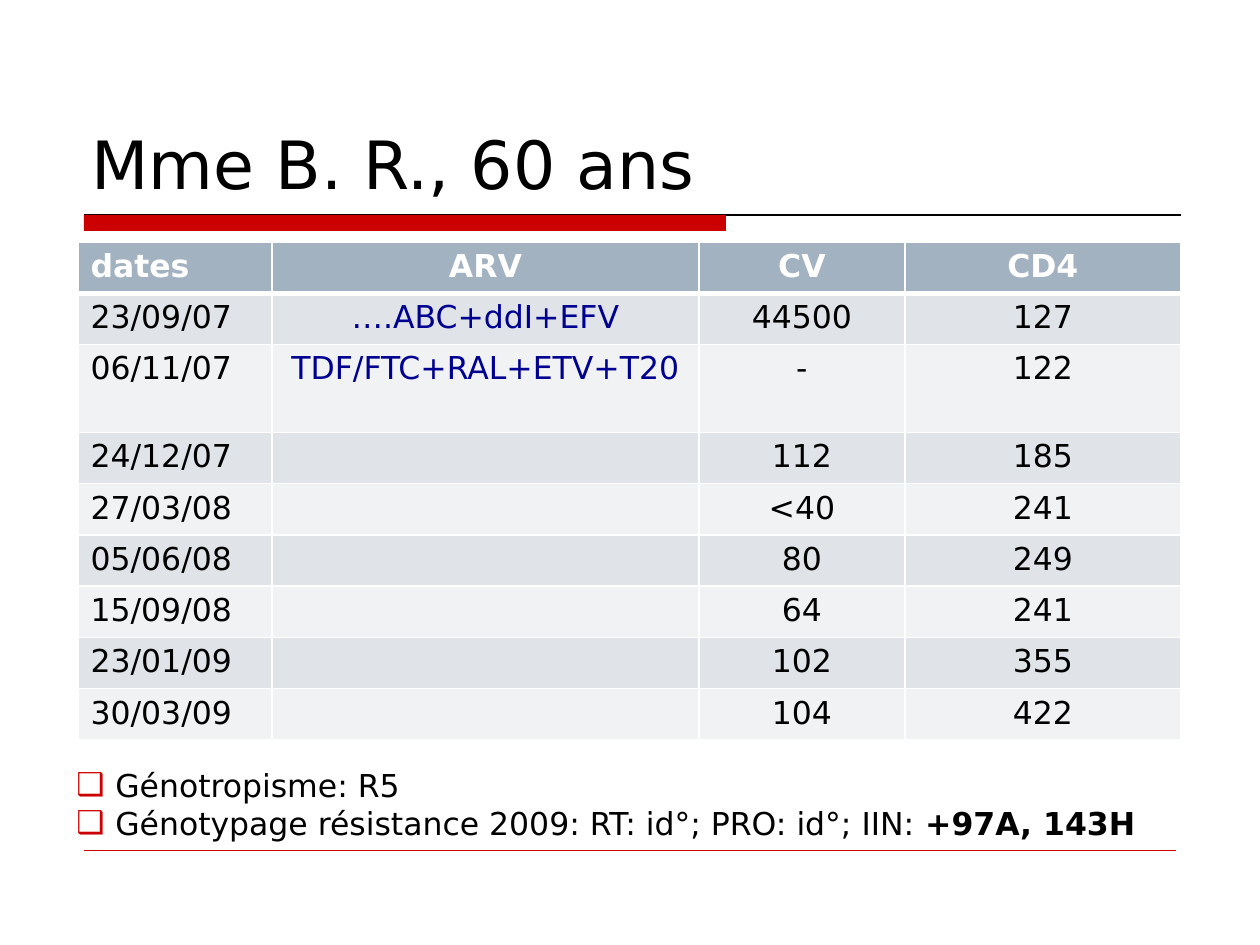
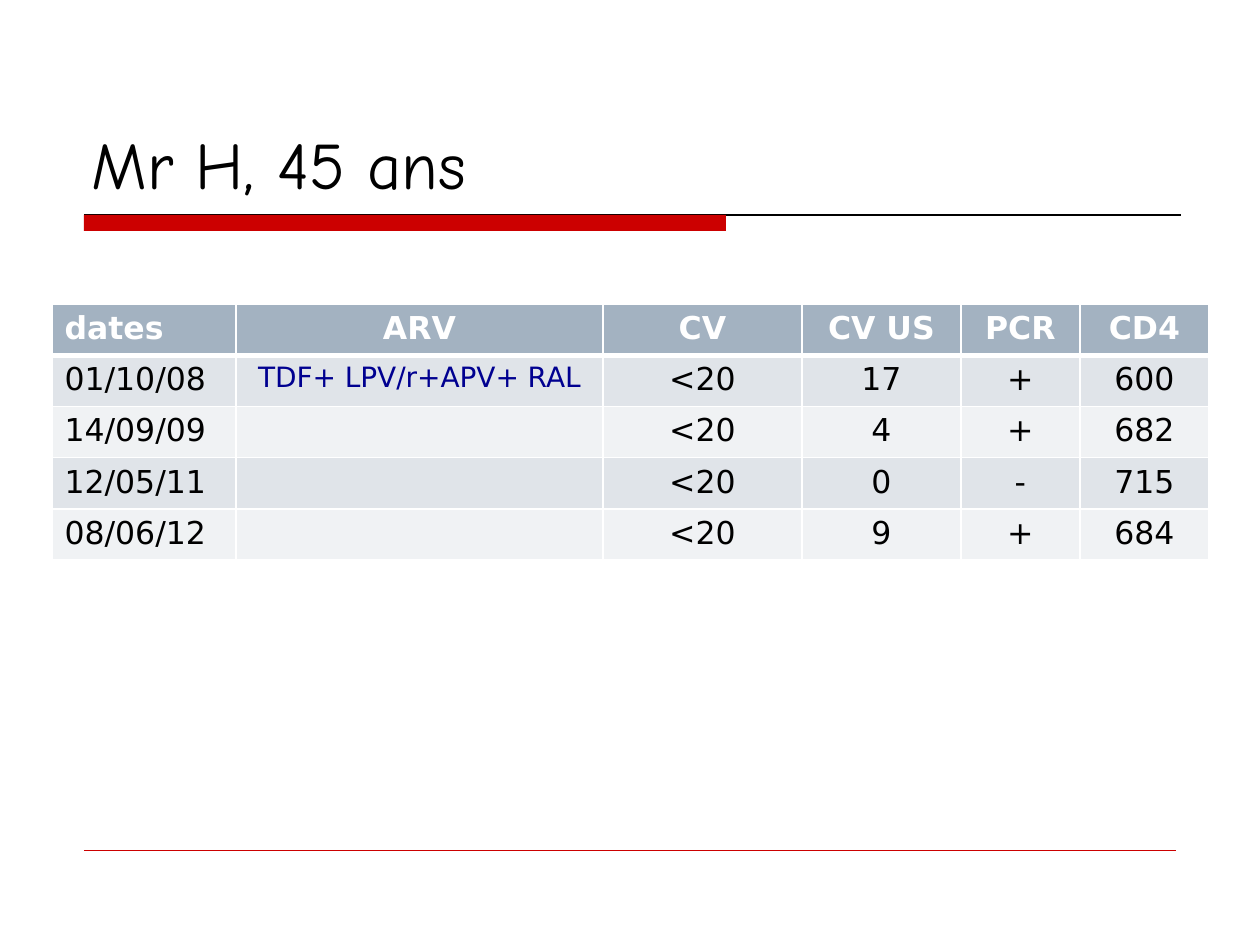
from lxml.etree import SubElement
from pptx import Presentation
from pptx.dml.color import RGBColor
from pptx.enum.shapes import MSO_CONNECTOR, MSO_SHAPE
from pptx.enum.text import MSO_ANCHOR, PP_ALIGN
from pptx.oxml import parse_xml
from pptx.oxml.ns import nsdecls, qn
from pptx.util import Emu, Pt

SCALE = 914400 / 126

BLACK = RGBColor(0x00, 0x00, 0x00)
WHITE = RGBColor(0xFF, 0xFF, 0xFF)
RED = RGBColor(0xCC, 0x00, 0x00)
NAVY = RGBColor(0x00, 0x00, 0x90)
HEAD = RGBColor(0xA3, 0xB2, 0xC1)
DARK = RGBColor(0xE0, 0xE4, 0xE9)
LIGHT = RGBColor(0xF0, 0xF2, 0xF4)

SANS = "DejaVu Sans"
COMIC = "Comic Neue"
BODY = {"name": SANS, "size": Pt(18), "bold": False}
TITLE = {"name": SANS, "size": Pt(38)}

WOMAN = [
    ["dates", "ARV", "CV", "CD4"],
    ["23/09/07", "….ABC+ddI+EFV", "44500", "127"],
    ["06/11/07", "TDF/FTC+RAL+ETV+T20", "-", "122"],
    ["24/12/07", "", "112", "185"],
    ["27/03/08", "", "<40", "241"],
    ["05/06/08", "", "80", "249"],
    ["15/09/08", "", "64", "241"],
    ["23/01/09", "", "102", "355"],
    ["30/03/09", "", "104", "422"],
]
MAN = [
    ["dates", "ARV", "CV", "CV US", "PCR", "CD4"],
    ["01/10/08", "TDF+ LPV/r+APV+ RAL", "<20", "17", "+", "600"],
    ["14/09/09", "", "<20", "4", "+", "682"],
    ["12/05/11", "", "<20", "0", "-", "715"],
    ["08/06/12", "", "<20", "9", "+", "684"],
]
NOTES = [
    [("Génotropisme: R5", False)],
    [("Génotypage résistance 2009: RT: id°; PRO: id°; IIN: ", False),
     ("+97A, 143H", True)],
]


def px(size):
    return Emu(round(size * SCALE))


def add_run(para, text, color=BLACK, **style):
    run = para.add_run()
    run.text = text
    for key, value in style.items():
        setattr(run.font, key, value)
    run.font.color.rgb = color


def add_rule(slide, left, right, top, color, width):
    rule = slide.shapes.add_connector(
        MSO_CONNECTOR.STRAIGHT, px(left), px(top), px(right), px(top))
    rule.line.color.rgb = color
    rule.line.width = Pt(width)
    SubElement(rule._element.spPr, qn("a:effectLst"))


def add_box(slide, *place):
    box = slide.shapes.add_textbox(*map(px, place))
    box.text_frame.word_wrap = True
    return box.text_frame


def add_page(deck, title, font=SANS):
    """Add a blank slide with the shared title, band and rules."""
    slide = deck.slides.add_slide(deck.slide_layouts[6])
    add_rule(slide, 84, 1181, 215, BLACK, 0.75)
    band = slide.shapes.add_shape(
        MSO_SHAPE.RECTANGLE, *map(px, (84, 215, 642, 16)))
    band.shadow.inherit = False
    band.fill.solid()
    band.fill.fore_color.rgb = RED
    band.line.fill.background()
    add_rule(slide, 84, 1176, 850, RED, 0.25)
    frame = add_box(slide, 79, 42, 1102, 167)
    frame.vertical_anchor = MSO_ANCHOR.BOTTOM
    add_run(frame.paragraphs[0], title, **{**TITLE, "name": font})
    return slide


def set_edges(cell, row):
    """Draw white cell borders, heavy between header and body."""
    props = cell._tc.get_or_add_tcPr()
    heavy = {"T": row == 1, "B": row == 0}
    for i, side in enumerate("LRTB"):
        width = Pt(3 if heavy.get(side) else 1)
        props.insert(i, parse_xml(
            f'<a:ln{side} {nsdecls("a")} w="{width}"><a:solidFill>'
            f'<a:srgbClr val="{WHITE}"/></a:solidFill></a:ln{side}>'))


def fill_cell(cell, text, row, col, drug):
    set_edges(cell, row)
    cell.fill.solid()
    cell.fill.fore_color.rgb = HEAD if row == 0 else (LIGHT, DARK)[row % 2]
    para = cell.text_frame.paragraphs[0]
    para.alignment = PP_ALIGN.CENTER if col else PP_ALIGN.LEFT
    if not text:
        return
    style = dict(BODY, bold=row == 0)
    color = WHITE if row == 0 else BLACK
    if row and col == 1:
        color = NAVY
        style["size"] = Pt(drug)
    add_run(para, text, color, **style)


def add_grid(slide, data, left, top, widths, height, tall=None, drug=18):
    """Add a table; tall maps row numbers to heights, the rest share evenly."""
    tall = tall or {}
    even = (height - sum(tall.values())) / (len(data) - len(tall))
    place = map(px, (left, top, sum(widths), height))
    grid = slide.shapes.add_table(len(data), len(widths), *place).table
    grid.first_row = grid.horz_banding = False
    for col, width in zip(grid.columns, widths):
        col.width = px(width)
    for r, line in enumerate(data):
        grid.rows[r].height = px(tall.get(r, even))
        for c, text in enumerate(line):
            fill_cell(grid.cell(r, c), text, r, c, drug)


def set_bullet(para, mark, indent):
    props = para._p.get_or_add_pPr()
    props.set("marL", str(px(indent)))
    props.set("indent", str(-px(indent)))
    color = SubElement(props, qn("a:buClr"))
    SubElement(color, qn("a:srgbClr")).set("val", str(RED))
    SubElement(props, qn("a:buFont")).set("typeface", SANS)
    SubElement(props, qn("a:buChar")).set("char", mark)


def add_notes(slide, notes, *place):
    frame = add_box(slide, *place)
    for i, parts in enumerate(notes):
        para = frame.add_paragraph() if i else frame.paragraphs[0]
        set_bullet(para, "❑", 39)
        for text, bold in parts:
            add_run(para, text, **dict(BODY, bold=bold))


def main():
    deck = Presentation()
    deck.slide_width, deck.slide_height = px(1260), px(945)

    slide = add_page(deck, "Mme B. R., 60 ans")
    add_grid(slide, WOMAN, 78, 242, [194, 427, 206, 276], 498, {2: 88})
    add_notes(slide, NOTES, 64, 760, 1171, 127)

    slide = add_page(deck, "Mr H, 45 ans", COMIC)
    add_grid(slide, MAN, 52, 304, [184, 367, 199, 159, 119, 129], 256, drug=16)

    deck.save("out.pptx")


if __name__ == "__main__":
    main()
